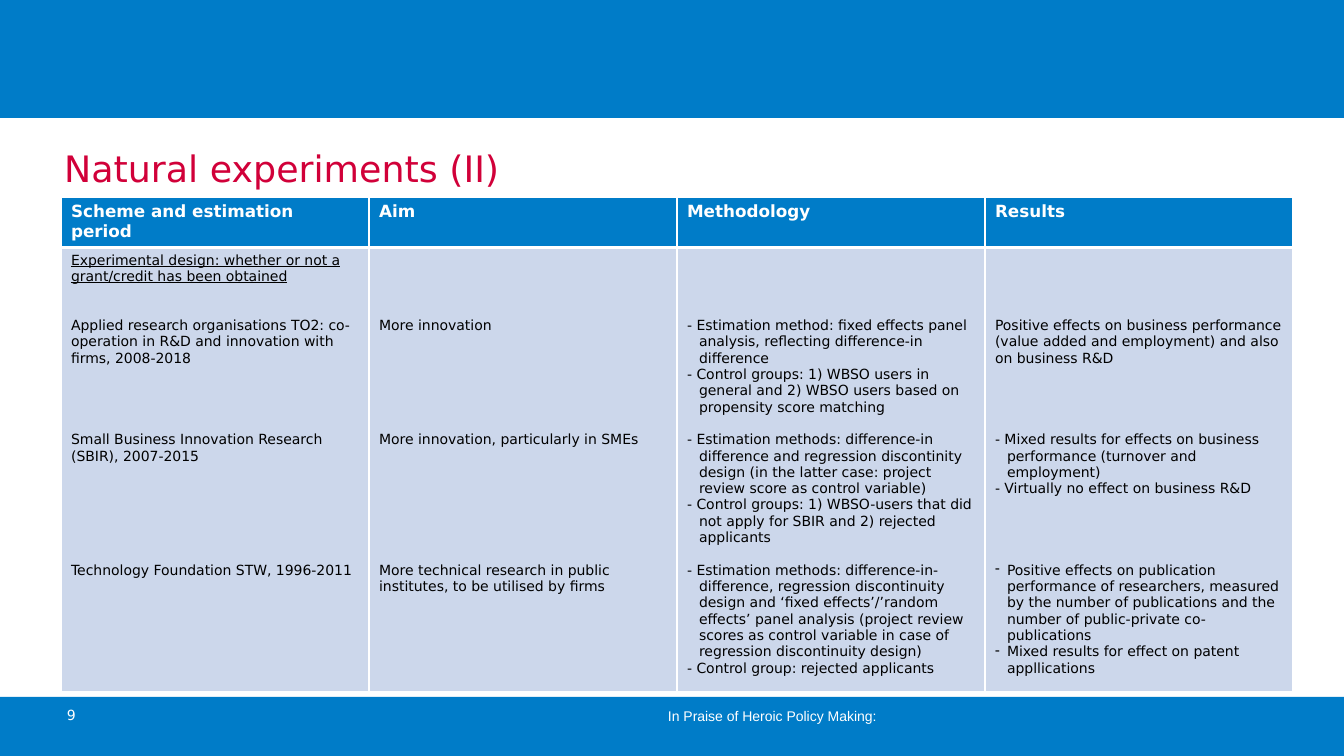
from lxml import etree
from pptx import Presentation
from pptx.dml.color import RGBColor
from pptx.enum.shapes import MSO_SHAPE
from pptx.enum.text import MSO_ANCHOR, PP_ALIGN
from pptx.oxml.ns import qn
from pptx.util import Emu, Pt

RECTANGLE = MSO_SHAPE.RECTANGLE
MIDDLE, TOP = MSO_ANCHOR.MIDDLE, MSO_ANCHOR.TOP
LEFT = PP_ALIGN.LEFT

EMU_PER_PX = 914400 / 100.8
BLUE, PALE, RED, WHITE, BLACK = "007CC8", "CCD7EB", "D10039", "FFFFFF", "000000"
SANS, FOOTER_FONT = "DejaVu Sans", "Arial"
BODY_SIZE = 10
LINE_POINTS = 11.64  # height of one line of body text
CELL_INSET_POINTS = 3.6
HANGING = 12
TITLE_ONLY = 5

PLAIN, UNDERLINED, DASHED, BULLET = "plain", "underlined", "dashed", "bullet"

HEADINGS = ["Scheme and estimation period", "Aim", "Methodology", "Results"]

# Per column: empty lines above the text, then (lines of gap, style, text)
COLUMNS = [
    (0, [
        (0, UNDERLINED, "Experimental design: whether or not a grant/credit has been obtained"),
        (2, PLAIN, "Applied research organisations TO2: co-operation in R&D and "
                   "innovation with firms, 2008-2018"),
        (4, PLAIN, "Small Business Innovation Research (SBIR), 2007-2015"),
        (6, PLAIN, "Technology Foundation STW, 1996-2011"),
    ]),
    (4, [
        (0, PLAIN, "More innovation"),
        (6, PLAIN, "More innovation, particularly in SMEs"),
        (7, PLAIN, "More technical research in public institutes, to be utilised by firms"),
    ]),
    (4, [
        (0, DASHED, "- Estimation method: fixed effects panel analysis, reflecting "
                    "difference-in difference"),
        (0, DASHED, "- Control groups: 1) WBSO users in general and 2) WBSO users "
                    "based on propensity score matching"),
        (1, DASHED, "- Estimation methods: difference-in difference and regression "
                    "discontinity design (in the latter case: project review score "
                    "as control variable)"),
        (0, DASHED, "- Control groups: 1) WBSO-users that did not apply for SBIR and "
                    "2) rejected applicants"),
        (1, DASHED, "- Estimation methods: difference-in-difference, regression "
                    "discontinuity design and ‘fixed effects’/’random effects’ panel "
                    "analysis (project review scores as control variable in case of "
                    "regression discontinuity design)"),
        (0, DASHED, "- Control group: rejected applicants"),
    ]),
    (4, [
        (0, PLAIN, "Positive effects on business performance (value added and "
                   "employment) and also on business R&D"),
        (4, DASHED, "- Mixed results for effects on business performance (turnover "
                    "and employment)"),
        (0, DASHED, "- Virtually no effect on business R&D"),
        (4, BULLET, "Positive effects on publication performance of researchers, "
                    "measured by the number of publications and the number of "
                    "public-private co-publications"),
        (0, BULLET, "Mixed results for effect on patent appllications"),
    ]),
]


def px(length):
    return Emu(round(length * EMU_PER_PX))


def color(value):
    return RGBColor.from_string(value)


def set_font(para, size, value, name=SANS, bold=False):
    font = para.font
    font.name, font.size, font.bold = name, Pt(size), bold
    font.color.rgb = color(value)


def set_hanging(para, bullet):
    properties = para._p.get_or_add_pPr()
    properties.set("marL", str(px(HANGING)))
    properties.set("indent", str(-px(HANGING)))
    if bullet:
        etree.SubElement(properties, qn("a:buChar")).set("char", "-")


def set_borders(cell, top, bottom):
    """White borders of 1 pt at the sides and the given points above and below."""
    properties = cell._tc.get_or_add_tcPr()
    for side, points in (("L", 1), ("R", 1), ("T", top), ("B", bottom)):
        line = etree.SubElement(properties, qn(f"a:ln{side}"), w=str(Pt(points)))
        fill = etree.SubElement(line, qn("a:solidFill"))
        etree.SubElement(fill, qn("a:srgbClr")).set("val", WHITE)


class SlideBuilder:
    def __init__(self, deck):
        self.slide = deck.slides.add_slide(deck.slide_layouts[TITLE_ONLY])
        self.shapes = self.slide.shapes

    def bar(self, top, height):
        bar = self.shapes.add_shape(RECTANGLE, 0, px(top), px(1344), px(height))
        bar.shadow.inherit = False
        bar.fill.solid()
        bar.fill.fore_color.rgb = color(BLUE)
        bar.line.fill.background()

    def title(self, text, left, top, width, height):
        title = self.shapes.title
        title.left, title.top = px(left), px(top)
        title.width, title.height = px(width), px(height)
        frame = title.text_frame
        frame.text = text
        frame.vertical_anchor = MIDDLE
        frame.paragraphs[0].alignment = LEFT
        set_font(frame.paragraphs[0], 26, RED)

    def label(self, text, left, top, width, height, name=SANS):
        box = self.shapes.add_textbox(px(left), px(top), px(width), px(height))
        frame = box.text_frame
        frame.word_wrap = True
        frame.text = text
        set_font(frame.paragraphs[0], 10, WHITE, name)

    def table(self, left, top, column_width, row_heights):
        frame = self.shapes.add_table(
            len(row_heights), len(HEADINGS), px(left), px(top),
            px(column_width * len(HEADINGS)), px(sum(row_heights)))
        table = frame.table
        for row, height in zip(table.rows, row_heights):
            row.height = px(height)
        for index, (heading, (lead, entries)) in enumerate(zip(HEADINGS, COLUMNS)):
            table.columns[index].width = px(column_width)
            self.heading_cell(table.cell(0, index), heading)
            self.body_cell(table.cell(1, index), lead, entries)

    def prepare_cell(self, cell, fill, top, bottom):
        set_borders(cell, top, bottom)
        cell.fill.solid()
        cell.fill.fore_color.rgb = color(fill)
        cell.vertical_anchor = TOP

    def heading_cell(self, cell, text):
        self.prepare_cell(cell, BLUE, 1, 3)
        cell.text = text
        set_font(cell.text_frame.paragraphs[0], 12, WHITE, bold=True)

    def body_cell(self, cell, lead, entries):
        self.prepare_cell(cell, PALE, 3, 1)
        cell.margin_top = Pt(CELL_INSET_POINTS + lead * LINE_POINTS)
        frame = cell.text_frame
        for index, (gap, style, text) in enumerate(entries):
            para = frame.add_paragraph() if index else frame.paragraphs[0]
            para.text = text
            if style in (DASHED, BULLET):
                set_hanging(para, style == BULLET)
            if gap:
                para.space_before = Pt(gap * LINE_POINTS)
            set_font(para, BODY_SIZE, BLACK)
            para.font.underline = style == UNDERLINED


def main():
    deck = Presentation()
    deck.slide_width, deck.slide_height = px(1344), px(756)
    page = SlideBuilder(deck)
    page.bar(0, 118)
    page.bar(697, 59)
    page.title("Natural experiments (II)", 54, 136, 1200, 63)
    page.label("In Praise of Heroic Policy Making:", 658, 703, 612, 31, FOOTER_FONT)
    page.label("9", 57, 702, 105, 40)
    page.table(61, 197, 308, (49, 434))
    deck.save("out.pptx")


if __name__ == "__main__":
    main()
